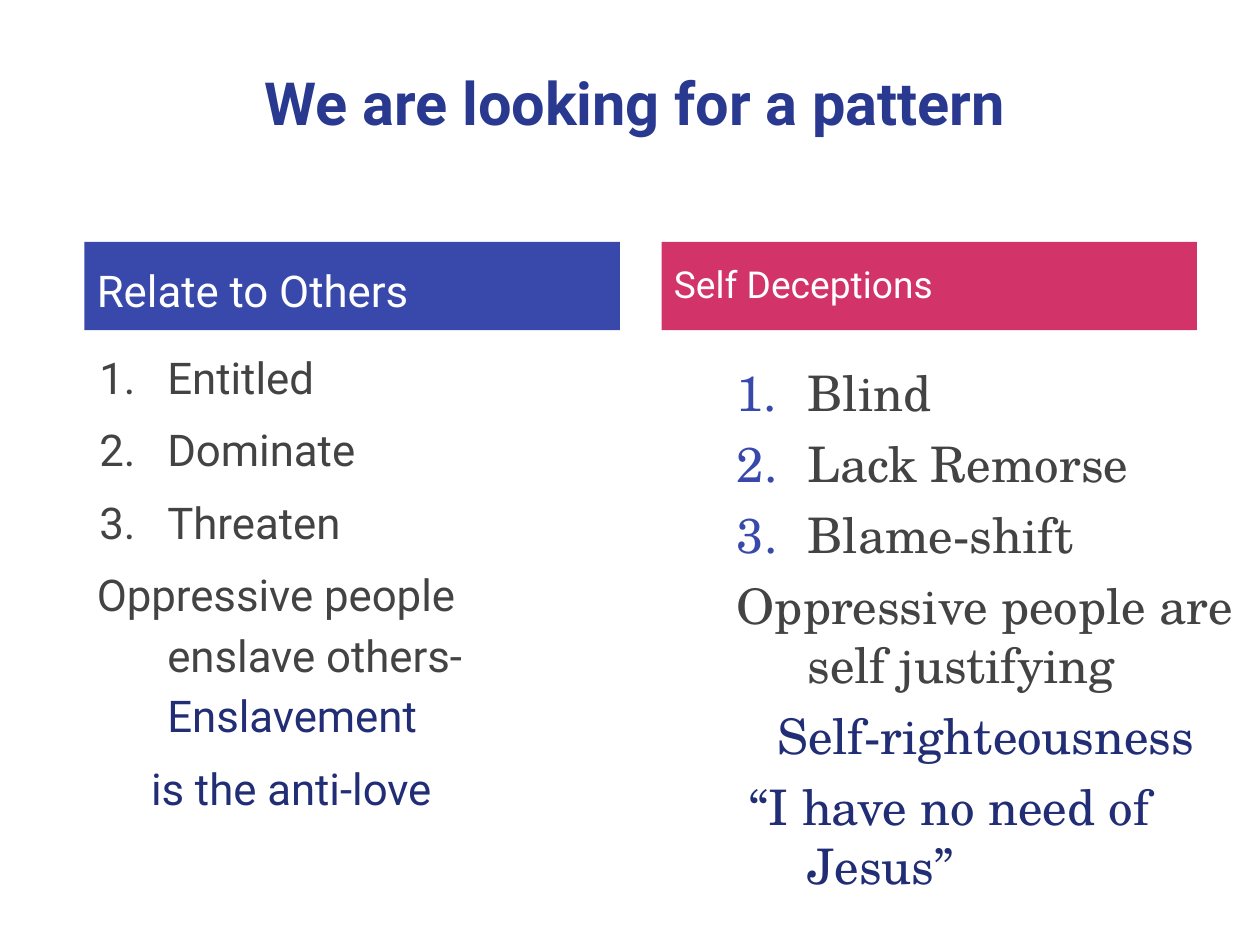
from pptx import Presentation
from pptx.dml.color import RGBColor
from pptx.enum.shapes import MSO_SHAPE
from pptx.enum.text import MSO_ANCHOR, PP_ALIGN
from pptx.oxml import parse_xml
from pptx.oxml.ns import nsdecls
from pptx.util import Inches, Pt

BLUE = RGBColor(0x39, 0x49, 0xAB)
PINK = RGBColor(0xD2, 0x33, 0x69)
TITLE_BLUE = RGBColor(0x2A, 0x39, 0x90)
NAVY = RGBColor(0x21, 0x2D, 0x74)
GREY = RGBColor(0x43, 0x43, 0x43)
WHITE = RGBColor(0xFF, 0xFF, 0xFF)

SANS, SERIF = "Roboto", "TeX Gyre Schola"
COLUMN_WIDTH = 4.25
HEADER_TOP, HEADER_HEIGHT = 1.92, 0.7
MARGIN = 0.56  # left margin of list text

TITLE = "We are looking for a pattern"

# Closing lines: (first-line start in inches, [(text, colour), ...])
COLUMNS = [
    {
        "header": "Relate to Others", "header_left": 0.67, "fill": BLUE,
        "header_size": 25, "header_spacing": 1.15, "header_gaps": (0, 0),
        "box": (0.67, 2.67, COLUMN_WIDTH, 3.92),
        "font": SANS, "size": 25, "spacing": 1.15,
        "number_colour": GREY, "number_start": 0.02,
        "numbered": ["Entitled", "Dominate", "Threaten"],
        "closing": [
            (0, [("Oppressive people enslave others- ", GREY), ("Enslavement", NAVY)]),
            (0.43, [("is the anti-love", NAVY)]),
        ],
    },
    {
        "header": "Self Deceptions", "header_left": 5.25, "fill": PINK,
        "header_size": 21.2, "header_spacing": 0.95, "header_gaps": (7, 12),
        "box": (5.75, 2.83, COLUMN_WIDTH, 4.67),
        "font": SERIF, "size": 28, "spacing": 1.0,
        "number_colour": BLUE, "number_start": 0,
        "numbered": ["Blind", "Lack Remorse", "Blame-shift"],
        "closing": [
            (0, [("Oppressive people are self justifying", GREY)]),
            (0.32, [("Self-righteousness", NAVY)]),
            (0.1, [("“I have no need of Jesus”", NAVY)]),
        ],
    },
]


def add_run(paragraph, text, font, size, colour, bold=False):
    run = paragraph.add_run()
    run.text = text
    run.font.name = font
    run.font.size = Pt(size)
    run.font.color.rgb = colour
    run.font.bold = bold


def add_text_frame(slide, box):
    frame = slide.shapes.add_textbox(*map(Inches, box)).text_frame
    frame.word_wrap = True
    return frame


def set_indent(paragraph, first_line):
    properties = paragraph._p.get_or_add_pPr()
    properties.set("marL", str(Inches(MARGIN)))
    properties.set("indent", str(Inches(first_line - MARGIN)))
    return properties


def number_paragraph(paragraph, column):
    properties = set_indent(paragraph, column["number_start"])
    for xml in (
        f'<a:buClr {nsdecls("a")}><a:srgbClr val="{column["number_colour"]}"/></a:buClr>',
        f'<a:buFont {nsdecls("a")} typeface="{column["font"]}"/>',
        f'<a:buAutoNum {nsdecls("a")} type="arabicPeriod"/>',
    ):
        properties.append(parse_xml(xml))


def add_header(slide, column):
    shape = slide.shapes.add_shape(
        MSO_SHAPE.RECTANGLE, Inches(column["header_left"]), Inches(HEADER_TOP),
        Inches(COLUMN_WIDTH), Inches(HEADER_HEIGHT))
    shape.shadow.inherit = False
    shape.fill.solid()
    shape.fill.fore_color.rgb = column["fill"]
    shape.line.fill.background()
    shape.text_frame.vertical_anchor = MSO_ANCHOR.MIDDLE
    paragraph = shape.text_frame.paragraphs[0]
    paragraph.alignment = PP_ALIGN.LEFT
    paragraph.line_spacing = column["header_spacing"]
    before, after = column["header_gaps"]
    paragraph.space_before, paragraph.space_after = Pt(before), Pt(after)
    add_run(paragraph, column["header"], SANS, column["header_size"], WHITE)


def add_list(slide, column):
    frame = add_text_frame(slide, column["box"])
    numbered = [(None, [(text, GREY)]) for text in column["numbered"]]
    for index, (first_line, runs) in enumerate(numbered + column["closing"]):
        paragraph = frame.add_paragraph() if index else frame.paragraphs[0]
        paragraph.line_spacing = column["spacing"]
        paragraph.space_before = Pt(7)
        if first_line is None:
            number_paragraph(paragraph, column)
        else:
            set_indent(paragraph, first_line)
        for text, colour in runs:
            add_run(paragraph, text, column["font"], column["size"], colour)


def main():
    presentation = Presentation()
    presentation.slide_width, presentation.slide_height = Inches(10), Inches(7.5)
    slide = presentation.slides.add_slide(presentation.slide_layouts[6])

    title_frame = add_text_frame(slide, (0.58, 0.33, 8.92, 0.95))
    title_frame.vertical_anchor = MSO_ANCHOR.MIDDLE
    title = title_frame.paragraphs[0]
    title.alignment = PP_ALIGN.CENTER
    add_run(title, TITLE, SANS, 34, TITLE_BLUE, bold=True)

    for column in COLUMNS:
        add_header(slide, column)
        add_list(slide, column)

    presentation.save("out.pptx")


if __name__ == "__main__":
    main()
